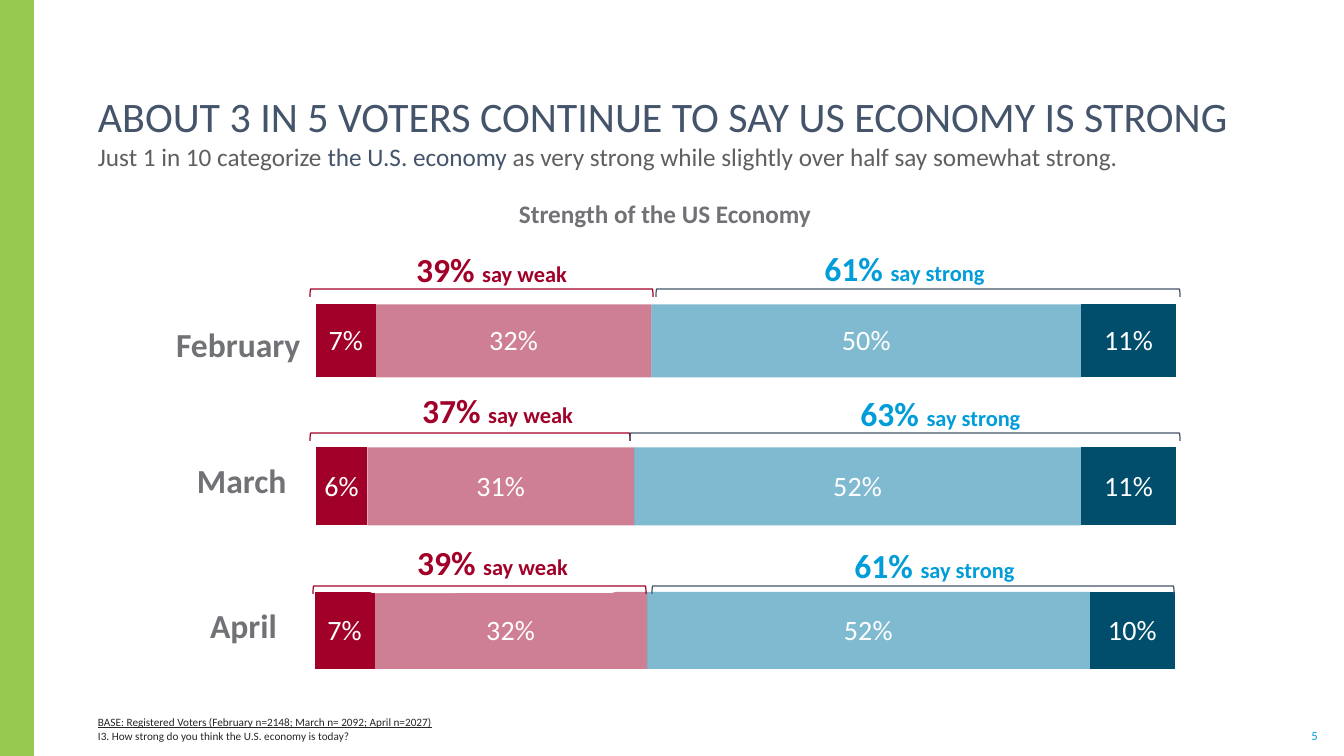
from dataclasses import dataclass

from lxml import etree
from pptx import Presentation
from pptx.chart.data import CategoryChartData
from pptx.dml.color import RGBColor
from pptx.enum.chart import XL_CHART_TYPE, XL_LABEL_POSITION
from pptx.enum.shapes import MSO_SHAPE
from pptx.enum.text import MSO_ANCHOR, PP_ALIGN
from pptx.oxml import parse_xml
from pptx.oxml.ns import nsdecls, qn
from pptx.util import Emu, Pt

BAR_STACKED_100 = XL_CHART_TYPE.BAR_STACKED_100
LABEL_CENTER = XL_LABEL_POSITION.CENTER
RECTANGLE = MSO_SHAPE.RECTANGLE
ROUNDED_RECTANGLE = MSO_SHAPE.ROUNDED_RECTANGLE
LEFT_BRACKET = MSO_SHAPE.LEFT_BRACKET
TOP, MIDDLE, BOTTOM = MSO_ANCHOR.TOP, MSO_ANCHOR.MIDDLE, MSO_ANCHOR.BOTTOM
LEFT, CENTER = PP_ALIGN.LEFT, PP_ALIGN.CENTER

WHITE = RGBColor(0xFF, 0xFF, 0xFF)
GREEN = RGBColor(0x96, 0xC9, 0x4D)
SLATE = RGBColor(0x44, 0x54, 0x6A)
TEXT_GRAY = RGBColor(0x5F, 0x5F, 0x5F)
HEADING_GRAY = RGBColor(0x70, 0x72, 0x76)
NOTE_BLACK = RGBColor(0x26, 0x26, 0x26)
SKY = RGBColor(0x00, 0x9D, 0xD9)
CRIMSON = RGBColor(0xA1, 0x00, 0x28)
BLUE = RGBColor(0x00, 0x76, 0xA3)
NAVY = RGBColor(0x00, 0x4E, 0x6C)

FONT = "Calibri"
SLIDE_W, SLIDE_H = 1344, 756
EMU_PER_PX = 12192000 / SLIDE_W
BRACKET_H = 8
SUMMARY_W, SUMMARY_H = 257, 61


@dataclass(frozen=True)
class Run:
    text: str
    size: int
    color: RGBColor
    bold: bool = False
    underline: bool = False


@dataclass(frozen=True)
class Box:
    left: int
    top: int
    width: int
    height: int


@dataclass(frozen=True)
class Answer:
    name: str
    color: RGBColor
    translucent: bool = False


@dataclass(frozen=True)
class Summary:
    """A total above the bar, with the bracket that spans its segments."""
    share: str
    left: int
    top: int
    bracket_left: int
    bracket_width: int


@dataclass(frozen=True)
class Month:
    name: str
    name_box: Box
    chart_box: Box
    shares: tuple[float, ...]
    bracket_top: int
    weak: Summary
    strong: Summary


ANSWERS = (
    Answer("Very weak", CRIMSON),
    Answer("Somewhat weak", CRIMSON, True),
    Answer("Somewhat strong", BLUE, True),
    Answer("Very strong", NAVY),
)
MONTHS = (
    Month("February", Box(166, 319, 153, 50), Box(298, 246, 896, 190),
          (0.07, 0.32, 0.50, 0.11), 289,
          Summary("39%", 363, 239, 310, 343), Summary("61%", 776, 238, 656, 524)),
    Month("March", Box(187, 455, 111, 50), Box(298, 385, 896, 203),
          (0.06, 0.31, 0.52, 0.11), 433,
          Summary("37%", 369, 380, 310, 320), Summary("63%", 812, 383, 630, 550)),
    Month("April", Box(200, 600, 88, 50), Box(297, 530, 896, 201),
          (0.07, 0.32, 0.52, 0.10), 586,
          Summary("39%", 364, 532, 313, 333), Summary("61%", 806, 535, 652, 522)),
)


def px(length: float) -> Emu:
    return Emu(round(length * EMU_PER_PX))


def place(box: Box) -> tuple[Emu, Emu, Emu, Emu]:
    return px(box.left), px(box.top), px(box.width), px(box.height)


def add_runs(paragraph, runs: tuple[Run, ...]) -> None:
    for item in runs:
        run = paragraph.add_run()
        run.text = item.text
        run.font.name = FONT
        run.font.size = Pt(item.size)
        run.font.color.rgb = item.color
        run.font.bold = item.bold
        run.font.underline = item.underline


def add_text(slide, box: Box, *lines: tuple[Run, ...], anchor=TOP, align=LEFT,
             wrap: bool = True, inset_x: int = 10, inset_y: int = 0) -> None:
    frame = slide.shapes.add_textbox(*place(box)).text_frame
    frame.word_wrap = wrap
    frame.vertical_anchor = anchor
    frame.margin_left = frame.margin_right = px(inset_x)
    frame.margin_top = frame.margin_bottom = px(inset_y)
    for index, runs in enumerate(lines):
        paragraph = frame.add_paragraph() if index else frame.paragraphs[0]
        paragraph.alignment = align
        if index:
            paragraph.space_before = Pt(0.6)
        add_runs(paragraph, runs)


def add_filled(slide, preset, box: Box, color: RGBColor):
    shape = slide.shapes.add_shape(preset, *place(box))
    shape.shadow.inherit = False
    shape.fill.solid()
    shape.fill.fore_color.rgb = color
    shape.line.fill.background()
    return shape


def add_summary(slide, summary: Summary, wording: str, color: RGBColor) -> None:
    box = Box(summary.left, summary.top, SUMMARY_W, SUMMARY_H)
    frame = add_filled(slide, ROUNDED_RECTANGLE, box, WHITE).text_frame
    frame.vertical_anchor = MIDDLE
    frame.paragraphs[0].alignment = CENTER
    add_runs(frame.paragraphs[0], (Run(f"{summary.share} ", 24, color, bold=True),
                                   Run(wording, 16, color, bold=True)))


def add_bracket(slide, summary: Summary, top: int, color: RGBColor) -> None:
    """Turn a left bracket a quarter so that it opens downwards."""
    width = summary.bracket_width
    shift = (width - BRACKET_H) / 2
    bracket = slide.shapes.add_shape(
        LEFT_BRACKET, px(summary.bracket_left + shift), px(top - shift),
        px(BRACKET_H), px(width))
    bracket.rotation = 90
    bracket.shadow.inherit = False
    bracket.fill.background()
    bracket.line.color.rgb = color
    bracket.line.width = Pt(0.85)


def clear_background_and_fix_plot(chart) -> None:
    chart_part = chart.element.find(qn("c:chart"))
    chart_part.addnext(parse_xml(
        f'<c:spPr {nsdecls("c", "a")}><a:noFill/><a:ln><a:noFill/></a:ln></c:spPr>'))
    plot_area = chart_part.find(qn("c:plotArea"))
    for old_layout in plot_area.findall(qn("c:layout")):
        plot_area.remove(old_layout)
    layout = etree.Element(qn("c:layout"))
    manual = etree.SubElement(layout, qn("c:manualLayout"))
    for tag, value in (("layoutTarget", "inner"), ("xMode", "edge"), ("yMode", "edge"),
                       ("x", "0.02"), ("y", "0.02"), ("w", "0.96"), ("h", "0.96")):
        etree.SubElement(manual, qn(f"c:{tag}")).set("val", value)
    plot_area.insert(0, layout)


def add_bar(slide, month: Month) -> None:
    data = CategoryChartData(number_format="0%")
    data.categories = [month.name]
    for answer, share in zip(ANSWERS, month.shares):
        data.add_series(answer.name, [share])
    chart = slide.shapes.add_chart(BAR_STACKED_100, *place(month.chart_box), data).chart
    chart.has_legend = chart.has_title = False
    chart.font.name, chart.font.size = FONT, Pt(10)
    chart.font.color.rgb = TEXT_GRAY
    chart.category_axis.visible = chart.value_axis.visible = False
    chart.value_axis.has_major_gridlines = False
    chart.value_axis.minimum_scale, chart.value_axis.maximum_scale = 0, 1
    plot = chart.plots[0]
    plot.gap_width, plot.overlap, plot.vary_by_categories = 150, 100, False
    for answer, series in zip(ANSWERS, plot.series):
        series.format.fill.solid()
        series.format.fill.fore_color.rgb = answer.color
        if answer.translucent:
            color = series.format.fill._xPr.find(f".//{qn('a:srgbClr')}")
            etree.SubElement(color, qn("a:alpha")).set("val", "50000")
        labels = series.data_labels
        labels.show_value, labels.position = True, LABEL_CENTER
        labels.number_format, labels.number_format_is_linked = "0%", False
        labels.font.name, labels.font.size = FONT, Pt(20)
        labels.font.color.rgb = WHITE
    clear_background_and_fix_plot(chart)


def add_month(slide, month: Month) -> None:
    add_summary(slide, month.strong, "say strong", SKY)
    add_bar(slide, month)
    add_summary(slide, month.weak, "say weak", CRIMSON)
    add_bracket(slide, month.weak, month.bracket_top, CRIMSON)
    add_bracket(slide, month.strong, month.bracket_top, SLATE)
    add_text(slide, month.name_box, (Run(month.name, 24, HEADING_GRAY, bold=True),),
             wrap=False, inset_y=5)


def main() -> None:
    deck = Presentation()
    deck.slide_width, deck.slide_height = px(SLIDE_W), px(SLIDE_H)
    slide = deck.slides.add_slide(deck.slide_layouts[6])
    add_filled(slide, RECTANGLE, Box(0, 0, 34, SLIDE_H), GREEN)
    add_text(slide, Box(1307, 728, 15, 15), (Run("5", 9, SKY),),
             anchor=MIDDLE, align=CENTER, wrap=False, inset_x=0)
    add_text(slide, Box(88, 79, 1200, 62), (
        Run("ABOUT 3 IN 5 VOTERS CONTINUE TO SAY US ECONOMY IS STRONG", 30, SLATE),
    ), anchor=BOTTOM)
    add_text(slide, Box(88, 141, 1200, 34), (
        Run("Just 1 in 10 categorize ", 18, TEXT_GRAY),
        Run("the U.S. economy ", 18, SLATE),
        Run("as very strong while slightly over half say somewhat strong.", 18, TEXT_GRAY)))
    add_text(slide, Box(88, 703, 1200, 40), (
        Run("BASE: Registered Voters (February n=2148; March n= 2092; April n=2027)",
            8, NOTE_BLACK, underline=True),
    ), (Run("I3. How strong do you think the U.S. economy is today?", 8, NOTE_BLACK),),
        anchor=BOTTOM)
    add_text(slide, Box(509, 193, 314, 40),
             (Run("Strength of the US Economy", 18, HEADING_GRAY, bold=True),),
             wrap=False, inset_y=5)
    for month in MONTHS:
        add_month(slide, month)
    deck.save("out.pptx")


if __name__ == "__main__":
    main()
